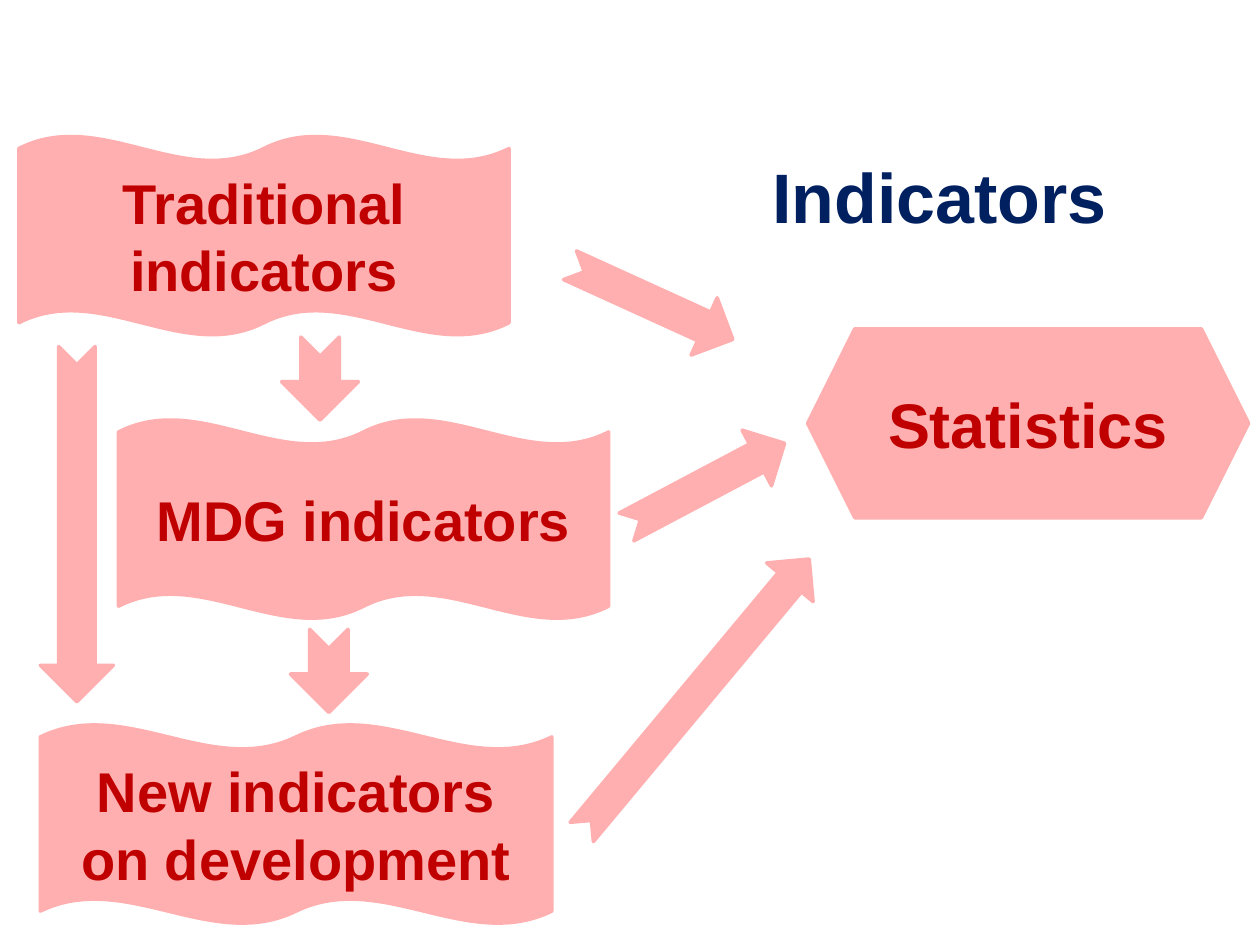
from pptx import Presentation
from pptx.dml.color import RGBColor
from pptx.enum.shapes import MSO_SHAPE
from pptx.enum.text import MSO_ANCHOR, PP_ALIGN
from pptx.util import Inches, Pt

PINK = RGBColor(0xFF, 0xAF, 0xAF)
RED = RGBColor(0xC0, 0x00, 0x00)
NAVY = RGBColor(0x00, 0x20, 0x60)
FONT = "Arial"


def write_centred(frame, lines, size, color):
    frame.word_wrap = True
    paragraph = frame.paragraphs[0]
    paragraph.alignment = PP_ALIGN.CENTER
    for number, line in enumerate(lines):
        if number:
            paragraph.add_line_break()
        run = paragraph.add_run()
        run.text = line
        run.font.name = FONT
        run.font.size = Pt(size)
        run.font.bold = True
        run.font.color.rgb = color


def add_pink_shape(slide, preset, box):
    shape = slide.shapes.add_shape(preset, *map(Inches, box))
    shape.shadow.inherit = False
    shape.fill.solid()
    shape.fill.fore_color.rgb = PINK
    shape.line.color.rgb = PINK
    shape.line.width = Pt(2)
    return shape


def add_label(slide, preset, box, lines, size):
    label = add_pink_shape(slide, preset, box)
    label.text_frame.vertical_anchor = MSO_ANCHOR.MIDDLE
    write_centred(label.text_frame, lines, size, RED)


def add_arrow(slide, box, angle):
    arrow = add_pink_shape(slide, MSO_SHAPE.NOTCHED_RIGHT_ARROW, box)
    arrow.rotation = angle


def add_heading(slide, box):
    title = slide.shapes.title
    title.left, title.top, title.width, title.height = map(Inches, box)
    title.text_frame.vertical_anchor = MSO_ANCHOR.TOP
    write_centred(title.text_frame, ["Indicators"], 40, NAVY)


def add_statistics(slide, box):
    """The hexagon, with the arrows that lead to it from the left."""
    left, top, _, _ = box
    add_label(slide, MSO_SHAPE.HEXAGON, box, ["Statistics"], 36)
    for dx, dy, width, height, angle in (
        (-1.95, -0.46, 1.42, 0.5, 24.5),   # from traditional indicators
        (-1.52, 0.99, 1.42, 0.5, 332.1),   # from MDG indicators
        (-2.3, 2.67, 2.82, 0.48, 309.8),   # from new indicators
    ):
        add_arrow(slide, (left + dx, top + dy, width, height), angle)


def add_indicator_flow(slide, box):
    """Three generations of indicators, with the arrows that run down."""
    left, top, _, _ = box
    wave_height = 1.58
    for dx, dy, width, lines in (
        (0.79, 2.25, 3.89, ["MDG indicators"]),
        (0.17, 4.67, 4.06, ["New indicators", "on development"]),
        (0, 0, 3.89, ["Traditional indicators"]),
    ):
        add_label(slide, MSO_SHAPE.DOUBLE_WAVE,
                  (left + dx, top + dy, width, wave_height), lines, 32)
    for dx, dy, length, thickness in (
        (-0.95, 2.79, 2.82, 0.58),  # traditional to new
        (2.13, 3.94, 0.66, 0.61),   # MDG to new
        (2.06, 1.62, 0.66, 0.61),   # traditional to MDG
    ):
        add_arrow(slide, (left + dx, top + dy, length, thickness), 90)


def main():
    presentation = Presentation()
    presentation.slide_width = Inches(10)
    presentation.slide_height = Inches(7.5)
    slide = presentation.slides.add_slide(presentation.slide_layouts[5])
    add_heading(slide, (5.33, 1.17, 4.25, 0.77))
    add_statistics(slide, (6.41, 2.61, 3.5, 1.5))
    add_indicator_flow(slide, (0.15, 1.08, 4.68, 6.25))
    presentation.save("out.pptx")


if __name__ == "__main__":
    main()
